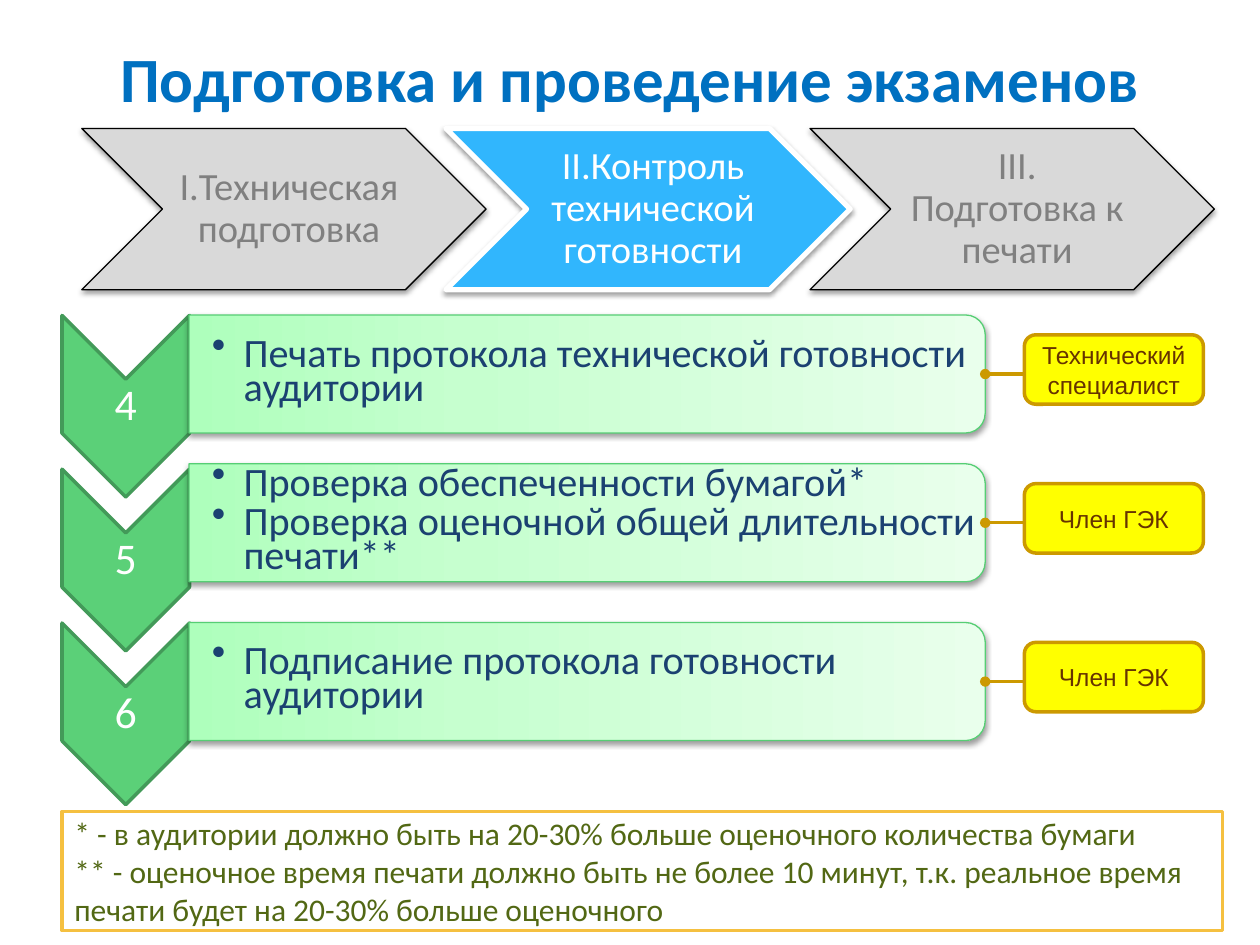
from copy import deepcopy
from dataclasses import dataclass

from pptx import Presentation
from pptx.dml.color import RGBColor
from pptx.enum.shapes import MSO_CONNECTOR, MSO_SHAPE as Shp
from pptx.enum.text import MSO_ANCHOR, PP_ALIGN as Al
from pptx.oxml import parse_xml
from pptx.oxml.ns import nsdecls, qn
from pptx.oxml.xmlchemy import OxmlElement
from pptx.util import Cm, Pt

COLORS = {
    "title": "0070C0", "white": "FFFFFF", "black": "000000",
    "stage": "D9D9D9", "stage_text": "808080", "active": "31B6FD",
    "step": "5BD078", "step_line": "439A59",
    "bar_line": "56CE74", "bar_text": "1B4171",
    "role": "FFFF00", "role_line": "CC9900", "role_text": "663300",
    "note_line": "F5C040", "note_text": "526814",
}
BAR_STOPS = ((0, "AEFFBC"), (0.35, "C6FFCF"), (1, "E9FFEC"))


@dataclass
class Box:
    """Visible frame in centimetres."""
    x: float
    y: float
    w: float
    h: float


@dataclass
class Stage:
    text: str
    active: bool = False


@dataclass
class Step:
    number: str
    lines: list
    role: str
    bar_y: float  # centre of the bar


STAGES = [
    Stage("I.Техническая подготовка"),
    Stage("II.Контроль технической готовности", active=True),
    Stage("III. Подготовка к печати"),
]
STEPS = [
    Step("4", ["Печать протокола технической готовности аудитории"],
         "Технический специалист", 7.54),
    Step("5", ["Проверка обеспеченности бумагой*",
               "Проверка оценочной общей длительности печати**"],
         "Член ГЭК", 10.54),
    Step("6", ["Подписание протокола готовности аудитории"],
         "Член ГЭК", 13.74),
]
NOTES = [
    "* - в аудитории должно быть на 20-30% больше оценочного количества бумаги",
    "** - оценочное время печати должно быть не более 10 минут, "
    "т.к. реальное время печати будет на 20-30% больше оценочного",
]


def rgb(name: str) -> RGBColor:
    return RGBColor.from_string(COLORS[name])


def write(sp, lines, *, size, color, font="Calibri", bold=False, align=Al.CENTER,
          spacing=None, after=None, insets=None, bullet=False):
    """Fill a shape or text box with formatted paragraphs."""
    tf = sp.text_frame
    tf.word_wrap = True
    tf.vertical_anchor = MSO_ANCHOR.MIDDLE
    if insets:
        left, other = insets
        tf.margin_left = Cm(left)
        tf.margin_top = tf.margin_right = tf.margin_bottom = Cm(other)
    for i, line in enumerate(lines):
        p = tf.add_paragraph() if i else tf.paragraphs[0]
        p.alignment = align
        if bullet:
            ppr = p._p.get_or_add_pPr()
            ppr.set("marL", str(Cm(0.64)))
            ppr.set("indent", str(-Cm(0.64)))
            mark = OxmlElement("a:buChar")
            mark.set("char", "•")
            ppr.append(mark)
        if spacing:
            p.line_spacing = spacing
        if after:
            p.space_after = Pt(after)
        r = p.add_run()
        r.text = line
        r.font.name, r.font.size, r.font.bold = font, Pt(size), bold
        r.font.color.rgb = rgb(color)


def add_text(s, box: Box, lines, **fmt):
    sp = s.shapes.add_textbox(Cm(box.x), Cm(box.y), Cm(box.w), Cm(box.h))
    write(sp, lines, **fmt)


def add_shape(s, kind, box: Box, line: str, width: float, fill=None,
              turned=False, shadow=False):
    """Draw a preset shape; a turned one is rotated to fit the visible frame."""
    w, h = (box.h, box.w) if turned else (box.w, box.h)
    x, y = box.x + (box.w - w) / 2, box.y + (box.h - h) / 2
    sp = s.shapes.add_shape(kind, Cm(x), Cm(y), Cm(w), Cm(h))
    sp.rotation = 90 if turned else 0
    sp.line.color.rgb, sp.line.width = rgb(line), Pt(width)
    if fill:
        sp.fill.solid()
        sp.fill.fore_color.rgb = rgb(fill)
    sp.shadow.inherit = False
    if shadow:
        sp._element.spPr.find(qn("a:effectLst")).append(parse_xml(
            f'<a:outerShdw {nsdecls("a")} blurRad="{Pt(3.1)}" dist="{Pt(1.6)}" '
            'dir="5400000" rotWithShape="0"><a:srgbClr val="000000">'
            '<a:alpha val="38000"/></a:srgbClr></a:outerShdw>'))
    return sp


def fill_bar(sp):
    """Three-stop gradient running along the bar."""
    sp.fill.gradient()
    sp.fill.gradient_angle = 90
    stops = sp._element.spPr.find(qn("a:gradFill")).find(qn("a:gsLst"))
    stops.append(deepcopy(stops[-1]))
    for stop, (position, color) in zip(sp.fill.gradient_stops, BAR_STOPS):
        stop.position = position
        stop.color.rgb = RGBColor.from_string(color)


def add_link(s, x1: float, x2: float, y: float):
    """Line with a round end at x2."""
    cx = s.shapes.add_connector(MSO_CONNECTOR.STRAIGHT, Cm(x1), Cm(y), Cm(x2), Cm(y))
    cx.line.color.rgb, cx.line.width = rgb("role_line"), Pt(1.75)
    end = OxmlElement("a:tailEnd")
    end.set("type", "oval")
    cx.line._get_or_add_ln().append(end)
    cx._element.spPr.append(OxmlElement("a:effectLst"))


def add_stage(s, i: int, stage: Stage):
    box = Box(1.65 + 7.34 * i, 2.59, 8.15, 3.25)
    fill, line, width, color = (("active", "white", 3, "white") if stage.active
                                else ("stage", "black", 0.75, "stage_text"))
    add_shape(s, Shp.CHEVRON, box, line, width, fill, shadow=True)
    add_text(s, Box(box.x + 1.64, box.y, 4.9, box.h), [stage.text],
             size=22, color=color, spacing=0.9, insets=(0.25, 0.08))


def add_step(s, i: int, step: Step):
    # Numbered arrow
    top = 6.36 + 3.1 * i
    add_shape(s, Shp.CHEVRON, Box(1.25, top, 2.57, 3.66), "step_line", 2, "step", turned=True)
    add_text(s, Box(1.25, top + 1.29, 2.57, 1.09), [step.number],
             size=25, color="white", spacing=0.9, insets=(0.05, 0.05))
    # Bar with actions
    bar = add_shape(s, Shp.ROUND_2_SAME_RECTANGLE, Box(3.81, step.bar_y - 1.19, 16.05, 2.38),
                    "bar_line", 0.75, turned=True, shadow=True)
    fill_bar(bar)
    add_text(s, Box(3.81, step.bar_y - 1.06, 15.93, 2.12), step.lines, size=23,
             color="bar_text", align=Al.LEFT, spacing=0.7, after=3.5,
             insets=(0.46, 0.05), bullet=True)
    # Responsible person
    role = add_shape(s, Shp.ROUNDED_RECTANGLE, Box(20.65, step.bar_y - 0.79, 3.61, 1.4),
                     "role_line", 2, "role")
    write(role, [step.role], size=14, color="role_text", font="Arial")
    add_link(s, 20.65, 19.86, step.bar_y)


def main():
    prs = Presentation()
    prs.slide_width, prs.slide_height = Cm(25.4), Cm(19.05)
    s = prs.slides.add_slide(prs.slide_layouts[6])

    add_text(s, Box(1.27, 0.46, 22.86, 2.21), ["Подготовка и проведение экзаменов"],
             size=36, color="title", bold=True)
    for i, step in enumerate(STEPS):
        add_step(s, i, step)
    # Footnotes
    notes = add_shape(s, Shp.RECTANGLE, Box(1.25, 16.36, 23.4, 2.4), "note_line", 2, "white")
    write(notes, NOTES, size=18, color="note_text", align=Al.LEFT)
    for i, stage in enumerate(STAGES):
        add_stage(s, i, stage)

    prs.save("out.pptx")


if __name__ == "__main__":
    main()
